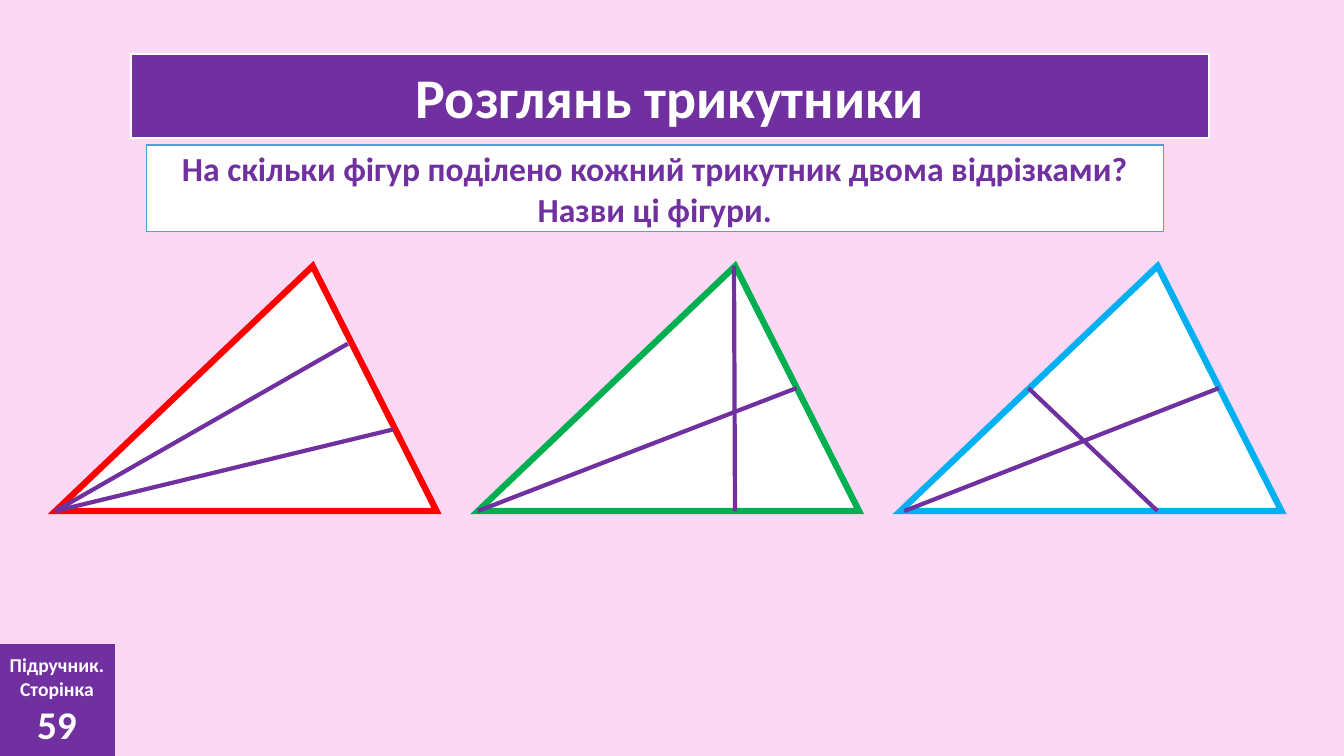
from lxml import etree
from pptx import Presentation
from pptx.dml.color import RGBColor
from pptx.enum.shapes import MSO_CONNECTOR, MSO_SHAPE
from pptx.enum.text import MSO_ANCHOR, MSO_AUTO_SIZE, PP_ALIGN
from pptx.oxml.ns import qn
from pptx.util import Inches, Pt

PINK = RGBColor(0xFC, 0xD8, 0xF4)
PURPLE = RGBColor(0x70, 0x30, 0xA0)
WHITE = RGBColor(0xFF, 0xFF, 0xFF)
BORDER = RGBColor(0x5B, 0x9B, 0xD5)
RED = RGBColor(0xFF, 0x00, 0x00)
GREEN = RGBColor(0x00, 0xB0, 0x50)
BLUE = RGBColor(0x00, 0xB0, 0xF0)
RECT, TRIANGLE = MSO_SHAPE.RECTANGLE, MSO_SHAPE.ISOSCELES_TRIANGLE
STRAIGHT = MSO_CONNECTOR.STRAIGHT
MIDDLE, CENTER, NO_FIT = MSO_ANCHOR.MIDDLE, PP_ALIGN.CENTER, MSO_AUTO_SIZE.NONE

LEFT, TOP, WIDTH, HEIGHT, PITCH = 0.55, 2.64, 3.78, 2.43, 4.19
APEX = 0.675
TRIANGLES = [
    (RED, [(0, HEIGHT, 2.9, 0.77), (0, HEIGHT, 3.35, 1.62)]),
    (GREEN, [(2.55, HEIGHT, 2.54, 0), (0, HEIGHT, 3.16, 1.21)]),
    (BLUE, [(0.04, HEIGHT, 3.16, 1.21), (2.55, HEIGHT, 1.27, 1.21)]),
]


class SlideBuilder:
    """Draws the elements of one slide in a shared style."""

    def __init__(self, prs, font="Calibri"):
        self.font = font
        self.s = prs.slides.add_slide(prs.slide_layouts[5])
        self.s.background.fill.solid()
        self.s.background.fill.fore_color.rgb = PINK

    def paint(self, sp, fill, line=None, width=0):
        sp.fill.solid()
        sp.fill.fore_color.rgb = fill
        if line is None:
            sp.line.fill.background()
        else:
            sp.line.color.rgb = line
            sp.line.width = Pt(width)
            ln = sp._element.spPr.find(qn("a:ln"))
            etree.SubElement(ln, qn("a:miter")).set("lim", "800000")

    def set_text(self, sp, lines, color):
        tf = sp.text_frame
        tf.word_wrap = True
        tf.auto_size = NO_FIT
        tf.vertical_anchor = MIDDLE
        for i, (text, size) in enumerate(lines):
            p = tf.add_paragraph() if i else tf.paragraphs[0]
            p.text = text
            p.alignment = CENTER
            p.font.name = self.font
            p.font.size = Pt(size)
            p.font.bold = True
            p.font.color.rgb = color

    def title(self, text, box):
        sp = self.s.shapes.title
        sp.left, sp.top, sp.width, sp.height = map(Inches, box)
        self.paint(sp, PURPLE, WHITE, 1.5)
        self.set_text(sp, [(text, 40)], WHITE)

    def shape(self, kind, box, fill, line=None, width=0):
        sp = self.s.shapes.add_shape(kind, *map(Inches, box))
        sp.shadow.inherit = False
        self.paint(sp, fill, line, width)
        return sp

    def triangle(self, left, color):
        sp = self.shape(TRIANGLE, (left, TOP, WIDTH, HEIGHT), WHITE, color, 4.5)
        sp.adjustments[0] = APEX

    def segment(self, x1, y1, x2, y2):
        c = self.s.shapes.add_connector(STRAIGHT, *map(Inches, (x1, y1, x2, y2)))
        c.line.color.rgb = PURPLE
        c.line.width = Pt(3)
        etree.SubElement(c._element.spPr, qn("a:effectLst"))


def main():
    prs = Presentation()
    prs.slide_width, prs.slide_height = Inches(13.33), Inches(7.5)
    b = SlideBuilder(prs)
    b.title("Розглянь трикутники", (1.3, 0.54, 10.69, 0.83))

    question = b.shape(RECT, (1.45, 1.44, 10.09, 0.86), WHITE, BORDER, 1)
    b.set_text(question, [("На скільки фігур поділено кожний трикутник двома "
                           "відрізками? Назви ці фігури.", 24)], PURPLE)

    for i, (color, segments) in enumerate(TRIANGLES):
        left = LEFT + i * PITCH
        b.triangle(left, color)
        for x1, y1, x2, y2 in segments:
            b.segment(left + x1, TOP + y1, left + x2, TOP + y2)

    page = b.shape(RECT, (-0.01, 6.39, 1.15, 1.11), PURPLE)
    b.set_text(page, [("Підручник.", 14), ("Сторінка", 14), ("59", 28)], WHITE)
    page.text_frame.margin_left = page.text_frame.margin_right = Inches(0.05)

    prs.save("out.pptx")


if __name__ == "__main__":
    main()
